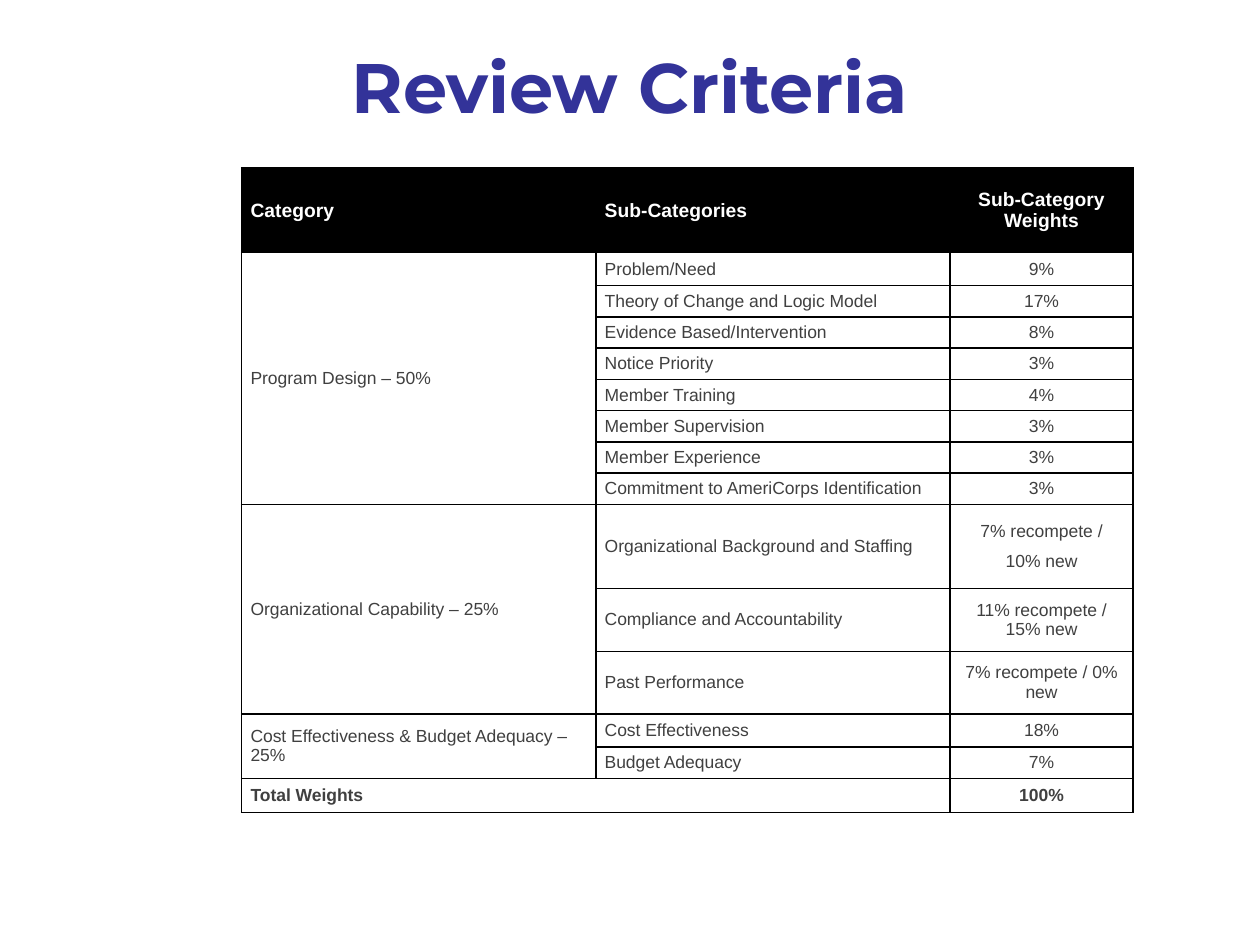
from dataclasses import dataclass
from itertools import accumulate

from lxml.etree import SubElement
from pptx import Presentation
from pptx.dml.color import RGBColor
from pptx.enum.text import MSO_ANCHOR, PP_ALIGN
from pptx.oxml.ns import qn
from pptx.util import Cm, Pt


@dataclass(frozen=True)
class Theme:
    title_font: str = "Montserrat"
    body_font: str = "Arial"
    title_color: RGBColor = RGBColor(0x33, 0x33, 0x99)
    header_color: RGBColor = RGBColor(0xFF, 0xFF, 0xFF)
    header_fill: RGBColor = RGBColor(0, 0, 0)
    body_color: RGBColor = RGBColor(0x40, 0x40, 0x40)
    border_color: str = "000000"
    border_width: Pt = Pt(1)
    title_size: Pt = Pt(40)
    header_size: Pt = Pt(11)
    body_size: Pt = Pt(10)


THEME = Theme()

HEADER = ("Category", "Sub-Categories", "Sub-Category Weights")
TOTAL = ("Total Weights", "100%")
# Each category holds (sub-category, weight, row height in cm)
CATEGORIES = {
    "Program Design – 50%": [
        ("Problem/Need", "9%", 0.67),
        ("Theory of Change and Logic Model", "17%", 0.63),
        ("Evidence Based/Intervention", "8%", 0.63),
        ("Notice Priority", "3%", 0.63),
        ("Member Training", "4%", 0.63),
        ("Member Supervision", "3%", 0.63),
        ("Member Experience", "3%", 0.63),
        ("Commitment to AmeriCorps Identification", "3%", 0.63),
    ],
    "Organizational Capability – 25%": [
        ("Organizational Background and Staffing", "7% recompete /\n10% new", 1.69),
        ("Compliance and Accountability", "11% recompete / 15% new", 1.27),
        ("Past Performance", "7% recompete / 0% new", 1.26),
    ],
    "Cost Effectiveness & Budget Adequacy – 25%": [
        ("Cost Effectiveness", "18%", 0.67),
        ("Budget Adequacy", "7%", 0.63),
    ],
}
COLUMN_WIDTHS = (7.14, 7.14, 3.69)
HEADER_HEIGHT, TOTAL_HEIGHT = 1.7, 0.69


def format_text(text_frame, font_name, size, color, bold, alignment):
    for paragraph in text_frame.paragraphs:
        paragraph.alignment = alignment
        for run in paragraph.runs:
            run.font.name = font_name
            run.font.size = size
            run.font.bold = bold
            run.font.color.rgb = color


def add_borders(cell):
    properties = cell._tc.get_or_add_tcPr()
    for position, side in enumerate(("lnL", "lnR", "lnT", "lnB")):
        line = SubElement(properties, qn(f"a:{side}"), w=str(int(THEME.border_width)))
        fill = SubElement(line, qn("a:solidFill"))
        SubElement(fill, qn("a:srgbClr"), val=THEME.border_color)
        properties.insert(position, line)


def fill_cell(cell, text, centered=False, header=False, bold=False):
    cell.text_frame.text = text
    alignment = PP_ALIGN.CENTER if centered else PP_ALIGN.LEFT
    size = THEME.header_size if header else THEME.body_size
    color = THEME.header_color if header else THEME.body_color
    format_text(cell.text_frame, THEME.body_font, size, color, header or bold, alignment)
    for paragraph in cell.text_frame.paragraphs[1:]:
        paragraph.space_before = Pt(6)


def style_cells(table):
    for row_index, row in enumerate(table.rows):
        for cell in row.cells:
            cell.vertical_anchor = MSO_ANCHOR.MIDDLE
            cell.margin_left = cell.margin_right = Cm(0.18)
            cell.margin_top = cell.margin_bottom = 0
            if row_index == 0:
                cell.fill.solid()
                cell.fill.fore_color.rgb = THEME.header_fill
            else:
                cell.fill.background()
            add_borders(cell)


def add_title(slide, left, top, width, height):
    shape = slide.shapes.add_textbox(left, top, width, height)
    text_frame = shape.text_frame
    text_frame.word_wrap = True
    text_frame.vertical_anchor = MSO_ANCHOR.TOP
    text_frame.text = "Review Criteria"
    format_text(text_frame, THEME.title_font, THEME.title_size,
                THEME.title_color, True, PP_ALIGN.CENTER)


def add_criteria_table(slide, left, top):
    criteria = [entry for entries in CATEGORIES.values() for entry in entries]
    heights = [HEADER_HEIGHT, *(height for _, _, height in criteria), TOTAL_HEIGHT]
    shape = slide.shapes.add_table(len(heights), len(COLUMN_WIDTHS), left, top,
                                   Cm(sum(COLUMN_WIDTHS)), Cm(sum(heights)))
    table = shape.table
    table.first_row = table.horz_banding = False
    for column, width in zip(table.columns, COLUMN_WIDTHS):
        column.width = Cm(width)
    for row, height in zip(table.rows, heights):
        row.height = Cm(height)
    style_cells(table)

    # Header
    for column_index, text in enumerate(HEADER):
        fill_cell(table.cell(0, column_index), text, column_index == 2, header=True)

    # Sub-categories and weights
    for row_index, (name, weight, _) in enumerate(criteria, start=1):
        fill_cell(table.cell(row_index, 1), name)
        fill_cell(table.cell(row_index, 2), weight, centered=True)

    # Categories, each spanning its sub-categories
    starts = accumulate((len(entries) for entries in CATEGORIES.values()), initial=1)
    for start, (category, entries) in zip(starts, CATEGORIES.items()):
        table.cell(start, 0).merge(table.cell(start + len(entries) - 1, 0))
        fill_cell(table.cell(start, 0), category)

    # Total
    last = len(heights) - 1
    table.cell(last, 0).merge(table.cell(last, 1))
    fill_cell(table.cell(last, 0), TOTAL[0], bold=True)
    fill_cell(table.cell(last, 2), TOTAL[1], centered=True, bold=True)


def main():
    presentation = Presentation()
    presentation.slide_width, presentation.slide_height = Cm(25.4), Cm(19.05)
    slide = presentation.slides.add_slide(presentation.slide_layouts[6])
    add_title(slide, Cm(1.27), Cm(0.76), Cm(22.86), Cm(3.18))
    add_criteria_table(slide, Cm(4.87), Cm(3.39))
    presentation.save("out.pptx")


if __name__ == "__main__":
    main()
